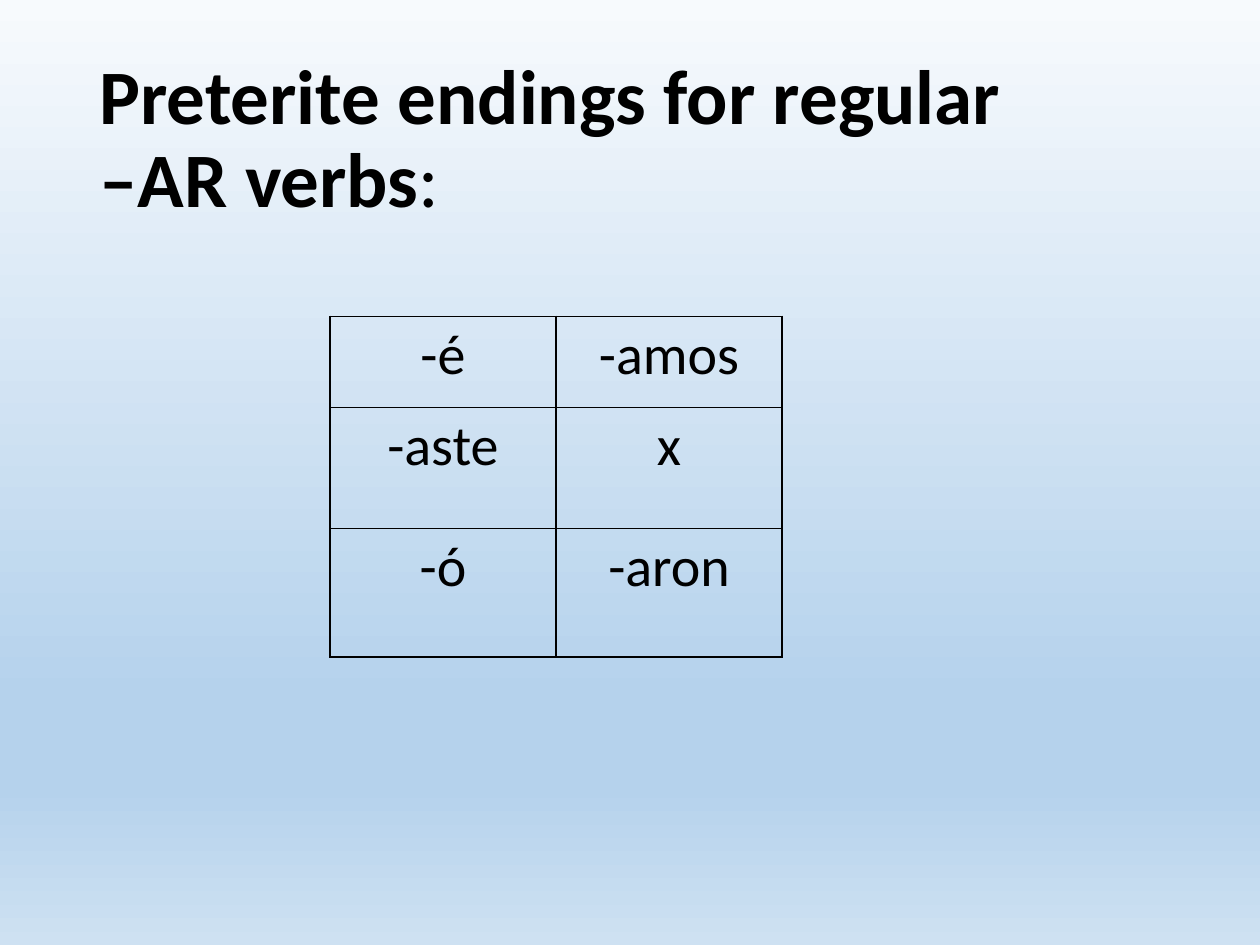
from lxml import etree
from pptx import Presentation
from pptx.dml.color import RGBColor
from pptx.enum import text
from pptx.oxml.ns import qn
from pptx.util import Cm, Pt

COLORS = {"ink": "000000", "top": "F7FAFD", "band": "B5D2EC", "bottom": "CEE1F2"}
FONT = "Calibri"
TITLE_ONLY = 5


def add_color(parent, color):
    etree.SubElement(parent, qn("a:srgbClr"), val=COLORS[color])


class SlideBuilder:
    """Holds the text style and the current slide."""

    def __init__(self, presentation, font=FONT, color="ink"):
        self.slide = presentation.slides.add_slide(presentation.slide_layouts[TITLE_ONLY])
        self.font_name = font
        self.color = color

    def style(self, font, size):
        font.name = self.font_name
        font.size = Pt(size)
        font.color.rgb = RGBColor.from_string(COLORS[self.color])

    def background(self, stops):
        fill = self.slide.background.fill
        fill.gradient()
        fill.gradient_angle = 270
        stop_list = next(self.slide.element.iter(qn("a:gsLst")))
        for stop in list(stop_list):
            stop_list.remove(stop)
        for percent, color in stops:
            stop = etree.SubElement(stop_list, qn("a:gs"), pos=str(percent * 1000))
            add_color(stop, color)

    def title(self, lines, ending, left, top, width, height, size):
        title = self.slide.shapes.title
        title.left, title.top, title.width, title.height = map(Cm, (left, top, width, height))
        frame = title.text_frame
        frame.word_wrap = True
        frame.vertical_anchor = text.MSO_ANCHOR.MIDDLE
        paragraph = frame.paragraphs[0]
        paragraph.alignment = text.PP_ALIGN.LEFT
        paragraph.line_spacing = 0.9
        for index, line in enumerate(lines):
            if index:
                paragraph.add_line_break()
            paragraph.add_run().text = line
        for run in paragraph.runs:
            run.font.bold = True
        paragraph.add_run().text = ending
        for run in paragraph.runs:
            self.style(run.font, size)

    def table(self, rows, left, top, column_width, row_heights, size):
        columns = len(rows[0])
        frame = self.slide.shapes.add_table(
            len(rows), columns, Cm(left), Cm(top),
            Cm(column_width * columns), Cm(sum(row_heights)))
        table = frame.table
        table.first_row = table.horz_banding = False
        for column in table.columns:
            column.width = Cm(column_width)
        for row, height, values in zip(table.rows, row_heights, rows):
            row.height = Cm(height)
            for cell, value in zip(row.cells, values):
                self.cell(cell, value, size)

    def cell(self, cell, value, size):
        cell.fill.background()
        cell.margin_left = cell.margin_right = Cm(0.19)
        cell.margin_top = cell.margin_bottom = 0
        cell.text = value
        paragraph = cell.text_frame.paragraphs[0]
        paragraph.alignment = text.PP_ALIGN.CENTER
        paragraph.line_spacing = 1.07
        self.style(paragraph.font, size)
        # Borders come before the fill in the cell properties
        properties = cell._tc.get_or_add_tcPr()
        for index, side in enumerate(("lnL", "lnR", "lnT", "lnB")):
            border = etree.Element(qn(f"a:{side}"), w=str(Pt(1)))
            add_color(etree.SubElement(border, qn("a:solidFill")), self.color)
            properties.insert(index, border)


def main():
    presentation = Presentation()
    presentation.slide_width, presentation.slide_height = Cm(25.4), Cm(19.05)
    builder = SlideBuilder(presentation)

    # Background
    builder.background([(0, "top"), (74, "band"), (83, "band"), (100, "bottom")])

    # Table of endings: singular, plural
    endings = [("-é", "-amos"), ("-aste", "x"), ("-ó", "-aron")]
    builder.table(endings, left=6.65, top=6.38, column_width=4.56,
                  row_heights=(1.83, 2.44, 2.59), size=32)

    # Title
    builder.title(("Preterite endings for regular ", "–AR verbs"), ":",
                  left=1.75, top=1.01, width=21.9, height=3.68, size=44)

    presentation.save("out.pptx")


if __name__ == "__main__":
    main()
